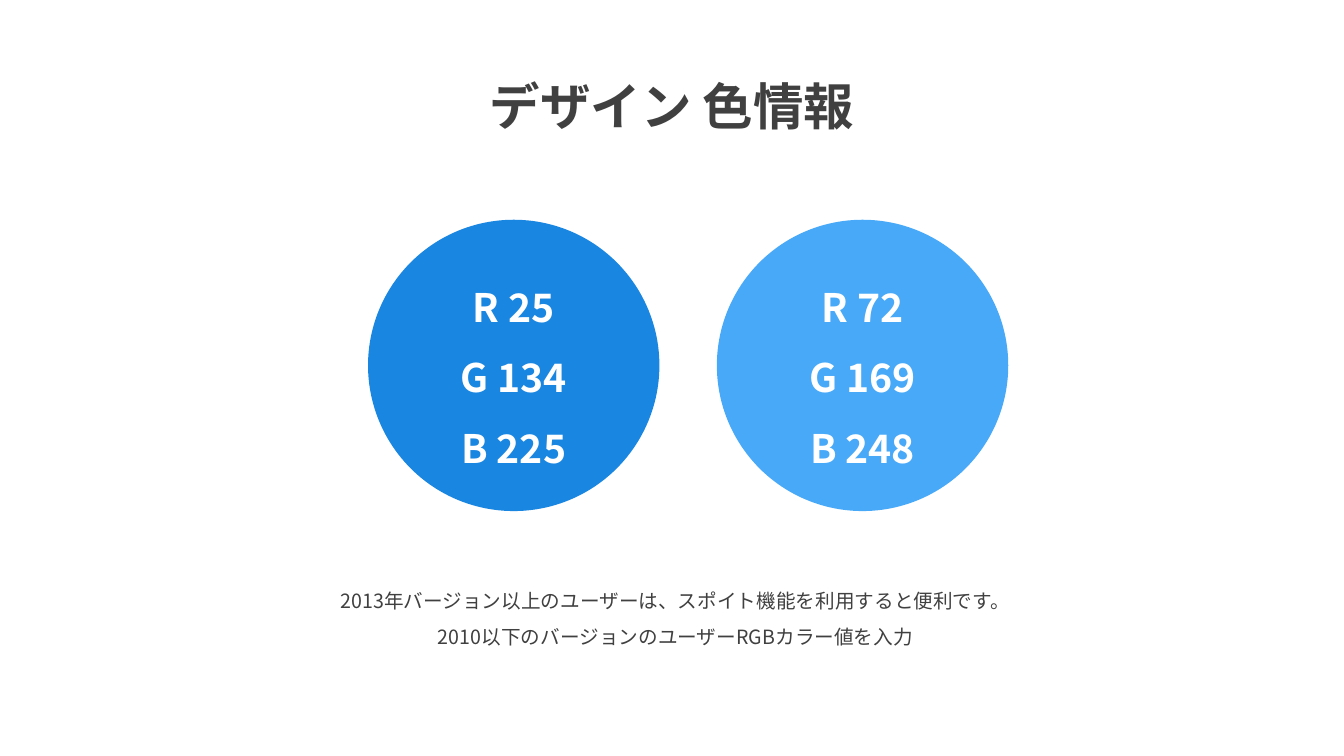
from lxml.etree import SubElement
from pptx import Presentation
from pptx.dml.color import RGBColor
from pptx.enum.shapes import MSO_SHAPE as Shape
from pptx.enum.text import MSO_ANCHOR as Anchor, MSO_AUTO_SIZE as AutoSize, PP_ALIGN as Align
from pptx.oxml.ns import qn
from pptx.util import Pt

PX = 9144  # EMU per px, 100 px to the inch
FONT = "Noto Sans CJK KR"
COLORS = {"text": "404040", "white": "FFFFFF", "blue": "1986E1", "sky": "48A9F8"}

CIRCLE_LEFT, CIRCLE_TOP, CIRCLE_SIZE, CIRCLE_STEP = 365, 218, 289, 346
SWATCHES = [
    ("blue", ["R 25", "G 134", "B 225"]),
    ("sky", ["R 72", "G 169", "B 248"]),
]


def color(name):
    return RGBColor.from_string(COLORS[name])


def box(left, top, width, height):
    return [length * PX for length in (left, top, width, height)]


def write_lines(frame, lines, size, color_name, bold=False):
    frame.word_wrap = True
    frame.text = "\n".join(lines)
    for paragraph in frame.paragraphs:
        paragraph.alignment = Align.CENTER
        paragraph.line_spacing = 1.5
        font = paragraph.font
        font.size, font.bold, font.name = Pt(size), bold, FONT
        font.color.rgb = color(color_name)
        # East Asian typeface for the Japanese text
        defaults = paragraph._p.pPr.find(qn("a:defRPr"))
        SubElement(defaults, qn("a:ea")).set("typeface", FONT)


def add_text(slide, bounds, lines, size, bold=False):
    frame = slide.shapes.add_textbox(*box(*bounds)).text_frame
    write_lines(frame, lines, size, "text", bold)
    frame.auto_size = AutoSize.SHAPE_TO_FIT_TEXT


def add_swatch(slide, left, fill, lines):
    bounds = box(left, CIRCLE_TOP, CIRCLE_SIZE, CIRCLE_SIZE)
    circle = slide.shapes.add_shape(Shape.OVAL, *bounds)
    circle.shadow.inherit = False
    circle.fill.solid()
    circle.fill.fore_color.rgb = color(fill)
    circle.line.fill.background()
    circle.text_frame.vertical_anchor = Anchor.MIDDLE
    write_lines(circle.text_frame, lines, 28, "white", bold=True)


def main():
    presentation = Presentation()
    presentation.slide_width, presentation.slide_height = 1333 * PX, 750 * PX
    slide = presentation.slides.add_slide(presentation.slide_layouts[6])

    # Colour circles
    for index, (fill, lines) in enumerate(SWATCHES):
        add_swatch(slide, CIRCLE_LEFT + index * CIRCLE_STEP, fill, lines)

    # Title
    add_text(slide, (424, 40, 485, 91), ["デザイン 色情報"], 36, bold=True)

    # Usage note
    add_text(slide, (252, 568, 836, 77), [
        "2013年バージョン以上のユーザーは、スポイト機能を利用すると便利です。",
        "2010以下のバージョンのユーザーRGBカラー値を入力",
    ], 14)

    presentation.save("out.pptx")


if __name__ == "__main__":
    main()
